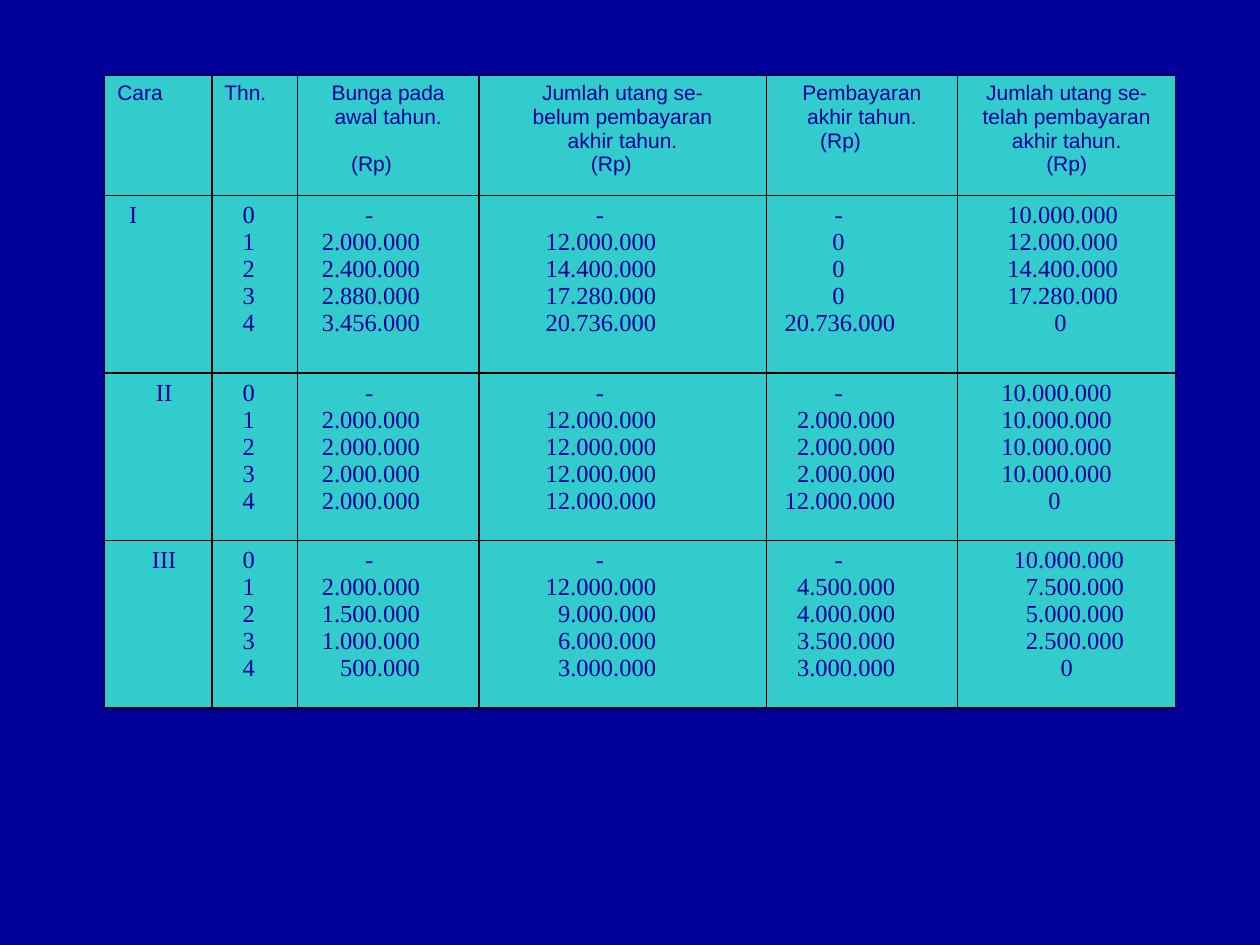
from lxml import etree
from pptx import Presentation
from pptx.dml.color import RGBColor
from pptx.enum import text
from pptx.oxml import ns
from pptx.util import Pt

NAVY = RGBColor(0x00, 0x00, 0x99)
TURQUOISE = RGBColor(0x33, 0xCC, 0xCC)
BLACK = RGBColor(0x00, 0x00, 0x00)

LEFT, CENTER, RIGHT = text.PP_ALIGN.LEFT, text.PP_ALIGN.CENTER, text.PP_ALIGN.RIGHT

TABLE_LEFT, TABLE_TOP = 59.8, 43.2
COLUMN_WIDTHS = [61.2, 49, 103.7, 164.2, 109.4, 124.6]
ROW_HEIGHTS = [68.4, 101.5, 95.8, 95.8]

HEADERS = [
    ["Cara"],
    ["Thn."],
    ["Bunga pada", "awal tahun.", "(Rp)"],
    ["Jumlah utang se-", "belum pembayaran", "akhir tahun.", "(Rp)"],
    ["Pembayaran", "akhir tahun.", "(Rp)"],
    ["Jumlah utang se-", "telah pembayaran", "akhir tahun.", "(Rp)"],
]
UNIT_INDENTS = {2: 23.4, 3: 56.8, 4: 23.6}
UNIT_GAPS = {2: 13.4}

YEARS = ["0", "1", "2", "3", "4"]
METHODS = [
    ("I", LEFT, 0, [
        ["-", "2.000.000", "2.400.000", "2.880.000", "3.456.000"],
        ["-", "12.000.000", "14.400.000", "17.280.000", "20.736.000"],
        ["-", "0", "0", "0", "20.736.000"],
        ["10.000.000", "12.000.000", "14.400.000", "17.280.000", "0"],
    ]),
    ("II", CENTER, -3.5, [
        ["-", "2.000.000", "2.000.000", "2.000.000", "2.000.000"],
        ["-", "12.000.000", "12.000.000", "12.000.000", "12.000.000"],
        ["-", "2.000.000", "2.000.000", "2.000.000", "12.000.000"],
        ["10.000.000", "10.000.000", "10.000.000", "10.000.000", "0"],
    ]),
    ("III", CENTER, 3.5, [
        ["-", "2.000.000", "1.500.000", "1.000.000", "500.000"],
        ["-", "12.000.000", "9.000.000", "6.000.000", "3.000.000"],
        ["-", "4.500.000", "4.000.000", "3.500.000", "3.000.000"],
        ["10.000.000", "7.500.000", "5.000.000", "2.500.000", "0"],
    ]),
]
AMOUNT_MARGINS = [(12, 33.7), (37, 62.9), (9, 35.7), (26, 33)]


def write(cell, line, first=False, font="Times New Roman", size=14,
          align=LEFT, indent=0, gap=0):
    frame = cell.text_frame
    paragraph = frame.paragraphs[0] if first else frame.add_paragraph()
    paragraph.alignment = align
    paragraph.space_before = Pt(gap)
    if indent:
        properties = paragraph._p.get_or_add_pPr()
        properties.set("marL", str(Pt(indent)))
        properties.set("indent", "0")
    run = paragraph.add_run()
    run.text = line
    run.font.name = font
    run.font.size = Pt(size)
    run.font.bold = False
    run.font.color.rgb = NAVY


def style_cell(cell):
    cell.fill.solid()
    cell.fill.fore_color.rgb = TURQUOISE
    properties = cell._tc.get_or_add_tcPr()
    for position, side in enumerate(("lnL", "lnR", "lnT", "lnB")):
        border = etree.Element(ns.qn(f"a:{side}"), w=str(Pt(1)))
        fill = etree.SubElement(border, ns.qn("a:solidFill"))
        etree.SubElement(fill, ns.qn("a:srgbClr"), val=str(BLACK))
        properties.insert(position, border)


def set_margins(cell, left, right=7.2):
    cell.margin_left, cell.margin_right = Pt(left), Pt(right)


def fill_header(table):
    for column, lines in enumerate(HEADERS):
        for number, line in enumerate(lines):
            is_unit = line == "(Rp)"
            indent = UNIT_INDENTS.get(column, 0) if is_unit else 0
            gap = UNIT_GAPS.get(column, 0) if is_unit else 0
            align = LEFT if column < 2 or indent else CENTER
            write(table.cell(0, column), line, first=number == 0, font="Arial",
                  size=12, align=align, indent=indent, gap=gap)


def fill_method(table, row, name, name_align, shift, amounts):
    name_cell, year_cell = table.cell(row, 0), table.cell(row, 1)
    set_margins(name_cell, 14)
    write(name_cell, name, first=True, align=name_align)
    set_margins(year_cell, 17.7)
    for number, year in enumerate(YEARS):
        write(year_cell, year, first=number == 0)
    for index, values in enumerate(amounts):
        cell = table.cell(row, index + 2)
        left, right = AMOUNT_MARGINS[index]
        offset = shift if index == len(amounts) - 1 else 0
        set_margins(cell, left + offset, right - offset)
        for number, value in enumerate(values):
            align = CENTER if value in ("-", "0") else RIGHT
            write(cell, value, first=number == 0, align=align)


def main():
    presentation = Presentation()
    presentation.slide_width, presentation.slide_height = Pt(720), Pt(540)
    slide = presentation.slides.add_slide(presentation.slide_layouts[6])
    slide.background.fill.solid()
    slide.background.fill.fore_color.rgb = NAVY

    table = slide.shapes.add_table(
        len(ROW_HEIGHTS), len(COLUMN_WIDTHS), Pt(TABLE_LEFT), Pt(TABLE_TOP),
        Pt(sum(COLUMN_WIDTHS)), Pt(sum(ROW_HEIGHTS))).table
    for column, width in zip(table.columns, COLUMN_WIDTHS):
        column.width = Pt(width)
    for row, height in zip(table.rows, ROW_HEIGHTS):
        row.height = Pt(height)
    for cell in table.iter_cells():
        style_cell(cell)

    fill_header(table)
    for row, method in enumerate(METHODS, start=1):
        fill_method(table, row, *method)
    presentation.save("out.pptx")


if __name__ == "__main__":
    main()
